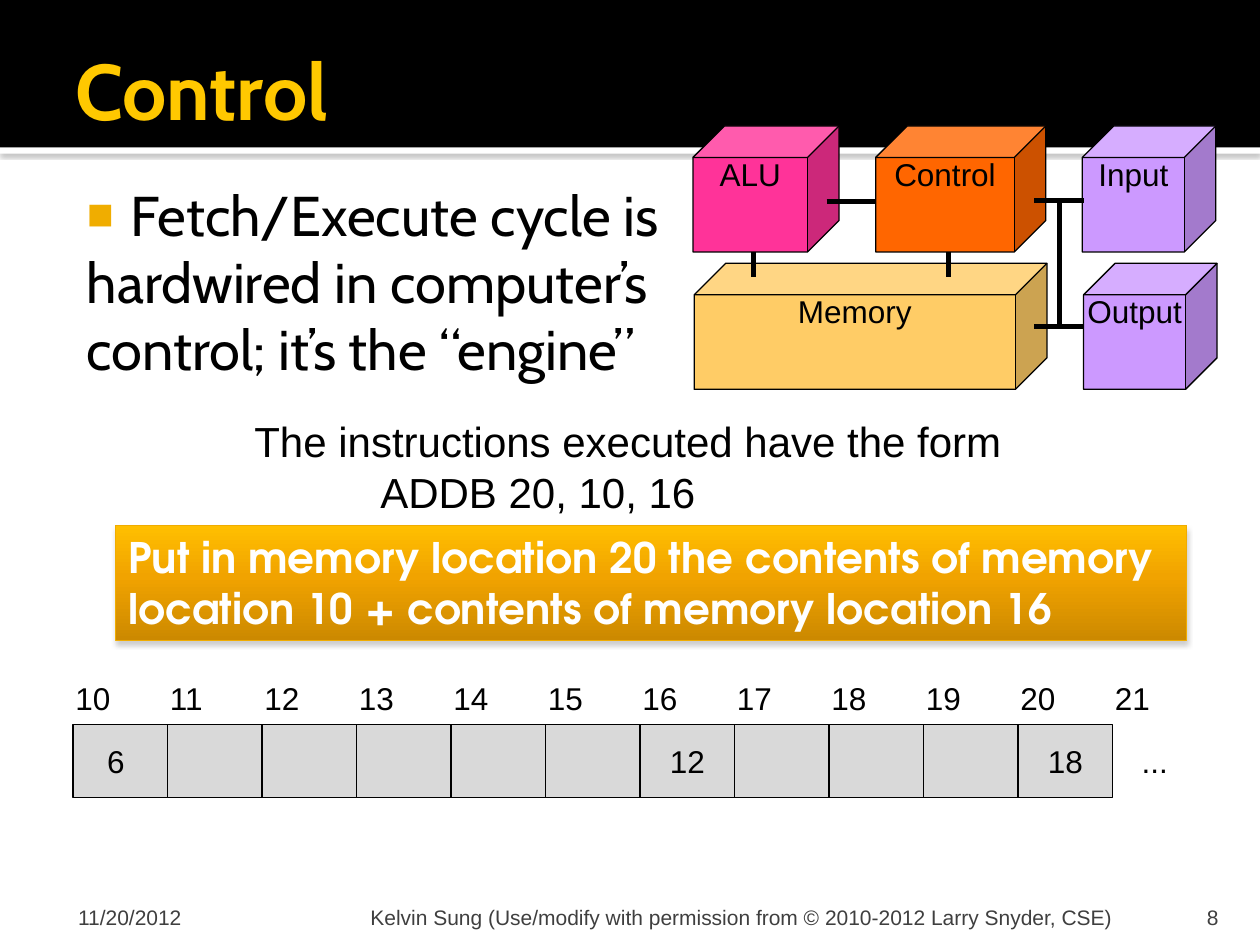
from copy import deepcopy

from lxml.etree import SubElement
from pptx import Presentation
from pptx.dml.color import RGBColor
from pptx.enum.shapes import MSO_CONNECTOR, MSO_SHAPE
from pptx.enum.text import MSO_ANCHOR, PP_ALIGN
from pptx.oxml.ns import qn
from pptx.util import Inches, Pt

BLACK = RGBColor(0x00, 0x00, 0x00)
WHITE = RGBColor(0xFF, 0xFF, 0xFF)
GREY = RGBColor(0x80, 0x80, 0x80)
FOOTER_GREY = RGBColor(0x3F, 0x3F, 0x3F)
CELL_GREY = RGBColor(0xD9, 0xD9, 0xD9)
TITLE_GOLD = RGBColor(0xFF, 0xC8, 0x00)
BULLET_GOLD = RGBColor(0xF0, 0xAD, 0x00)
BANNER_LINE = RGBColor(0xF0, 0xAC, 0x00)
BANNER_STOPS = [
    (0, RGBColor(0xFF, 0xBF, 0x00)),
    (45, RGBColor(0xF1, 0xA3, 0x00)),
    (100, RGBColor(0xCC, 0x89, 0x00)),
]
MEMORY_YELLOW = RGBColor(0xFF, 0xCC, 0x66)
DEVICE_PURPLE = RGBColor(0xCC, 0x99, 0xFF)
ALU_PINK = RGBColor(0xFF, 0x33, 0x99)
CONTROL_ORANGE = RGBColor(0xFF, 0x66, 0x00)

DEFAULT_INSETS = (0.1, 0.05, 0.1, 0.05)


class SlideBuilder:
    font = "Arial"
    size = 18

    def __init__(self, page):
        self.page = page

    def set_text(self, shape, text, size=None, font=None, color=BLACK, bold=False,
                 align=PP_ALIGN.LEFT, anchor=MSO_ANCHOR.TOP, insets=DEFAULT_INSETS, wrap=True):
        frame = shape.text_frame
        frame.word_wrap = wrap
        frame.vertical_anchor = anchor
        (frame.margin_left, frame.margin_top,
         frame.margin_right, frame.margin_bottom) = map(Inches, insets)
        frame.text = text
        for para in frame.paragraphs:
            para.alignment = align
            for span in para.runs:
                span.font.name = font or self.font
                span.font.size = Pt(size or self.size)
                span.font.bold = bold
                span.font.color.rgb = color
        return shape

    def text(self, place, text, **style):
        box = self.page.shapes.add_textbox(*map(Inches, place))
        return self.set_text(box, text, **style)

    def shape(self, place, fill=None, line=None, width=0.75, kind=MSO_SHAPE.RECTANGLE):
        shape = self.page.shapes.add_shape(kind, *map(Inches, place))
        shape.shadow.inherit = False
        if fill is not None:
            shape.fill.solid()
            shape.fill.fore_color.rgb = fill
        if line is None:
            shape.line.fill.background()
        else:
            shape.line.color.rgb = line
            shape.line.width = Pt(width)
        return shape

    def shadow(self, shape, alpha, blur, distance):
        effects = shape._element.spPr.find(qn("a:effectLst"))
        outer = SubElement(effects, qn("a:outerShdw"), blurRad=str(Pt(blur)),
                           dist=str(Pt(distance)), dir="5400000", rotWithShape="0")
        color = SubElement(outer, qn("a:srgbClr"), val=str(GREY))
        SubElement(color, qn("a:alpha"), val=str(alpha * 1000))

    def gradient(self, shape, stops):
        shape.fill.gradient()
        shape.fill.gradient_angle = 270
        stop_list = shape._element.spPr.find(qn("a:gradFill")).find(qn("a:gsLst"))
        stop_list.append(deepcopy(stop_list[-1]))
        for stop, (position, color) in zip(shape.fill.gradient_stops, stops):
            stop.position = position / 100
            stop.color.rgb = color

    def indent(self, para, left, first):
        properties = para._p.get_or_add_pPr()
        properties.set("marL", str(Inches(left)))
        properties.set("indent", str(Inches(first)))
        return properties

    def bullet(self, properties, symbol, color, percent):
        holder = SubElement(properties, qn("a:buClr"))
        SubElement(holder, qn("a:srgbClr"), val=str(color))
        SubElement(properties, qn("a:buSzPct"), val=str(percent * 1000))
        SubElement(properties, qn("a:buFont"), typeface=self.font)
        SubElement(properties, qn("a:buChar"), char=symbol)

    def cube(self, place, label, fill):
        cube = self.shape(place, fill, BLACK, kind=MSO_SHAPE.CUBE)
        cube.adjustments[0] = 0.25
        self.set_text(cube, label, align=PP_ALIGN.CENTER, insets=(0, 0, 0, 0))
        para = cube.text_frame.paragraphs[0]
        para.line_spacing = 0.96
        para.space_before = Pt(12)
        para.space_after = Pt(2)

    def wire(self, *ends):
        wire = self.page.shapes.add_connector(MSO_CONNECTOR.STRAIGHT, *map(Inches, ends))
        wire.line.color.rgb = BLACK
        wire.line.width = Pt(3)
        SubElement(wire._element.spPr, qn("a:effectLst"))


def main():
    deck = Presentation()
    deck.slide_width, deck.slide_height = Inches(10), Inches(7.5)
    page = deck.slides.add_slide(deck.slide_layouts[6])
    builder = SlideBuilder(page)

    # Header band
    strip = builder.shape((0, 1.17, 10, 0.05), WHITE)
    builder.shadow(strip, 60, 2.5, 0.8)
    builder.shape((0, 0, 10, 1.17), BLACK)
    builder.text((0.5, 0.17, 9, 1.08), "Control", size=45, font="Cabin", color=TITLE_GOLD,
                 bold=True, anchor=MSO_ANCHOR.MIDDLE, insets=(0.1, 0.05, 0.05, 0.05))

    # Footer
    footer = {"size": 12, "color": FOOTER_GREY, "anchor": MSO_ANCHOR.BOTTOM}
    builder.text((0.5, 7.08, 2.33, 0.3), "11/20/2012", insets=(0.12, 0.05, 0.05, 0), **footer)
    builder.text((2.89, 7.08, 6.02, 0.3),
                 "Kelvin Sung (Use/modify with permission from © 2010-2012 Larry Snyder, CSE)",
                 insets=(0.05, 0.05, 0.05, 0), **footer)
    builder.text((8.97, 7.08, 0.8, 0.3), "8", align=PP_ALIGN.RIGHT,
                 insets=(0.1, 0.05, 0.1, 0), **footer)

    # Main statement
    body = builder.text((0.5, 1.33, 9, 5.67),
                        "Fetch/Execute cycle is\nhardwired in computer’s\ncontrol; it’s the “engine”",
                        size=32, font="Cabin", insets=(0.06, 0.1, 0.1, 0.05))
    properties = [builder.indent(para, 0.48, -0.35) for para in body.text_frame.paragraphs]
    builder.bullet(properties[0], "■", BULLET_GOLD, 80)

    # Instruction form and its meaning
    builder.text((1.92, 3.25, 6.19, 0.91),
                 "The instructions executed have the form\n\t\tADDB 20, 10, 16", size=24)
    banner = builder.shape((0.92, 4.17, 8.5, 0.91), line=BANNER_LINE, width=0.5)
    builder.gradient(banner, BANNER_STOPS)
    builder.shadow(banner, 38, 3.1, 2)
    builder.set_text(banner, "Put in memory location 20 the contents of memory "
                     "location 10 + contents of memory location 16",
                     size=24, font="TeX Gyre Adventor", color=WHITE, bold=True)

    # Memory cells with their addresses
    contents = {10: "6 ", 16: "12", 20: "18"}
    centred = {"align": PP_ALIGN.CENTER, "anchor": MSO_ANCHOR.MIDDLE}
    for index, address in enumerate(range(10, 22)):
        offset = index * 0.75
        builder.text((0.5 + offset, 5.34, 0.57, 0.5), str(address))
        if address < 21:
            cell = builder.shape((0.58 + offset, 5.75, 0.75, 0.58), CELL_GREY, BLACK)
            if address in contents:
                builder.set_text(cell, contents[address], wrap=False, **centred)
    builder.text((8.75, 5.75, 0.83, 0.58), "...", **centred)

    # Computer diagram
    builder.cube((5.51, 2.09, 2.8, 1), "Memory", MEMORY_YELLOW)
    builder.cube((8.6, 2.09, 1.06, 1), "Output", DEVICE_PURPLE)
    builder.cube((5.5, 1, 1.16, 1), "ALU", ALU_PINK)
    builder.cube((6.95, 1, 1.35, 1), "Control", CONTROL_ORANGE)
    builder.wire(6.56, 1.6, 6.95, 1.6)
    for x in (5.98, 7.53):
        builder.wire(x, 2, x, 2.2)
    builder.cube((8.59, 1, 1.06, 1), "Input", DEVICE_PURPLE)
    builder.wire(8.41, 1.59, 8.41, 2.59)
    for y in (1.59, 2.59):
        builder.wire(8.21, y, 8.6, y)

    deck.save("out.pptx")


if __name__ == "__main__":
    main()
